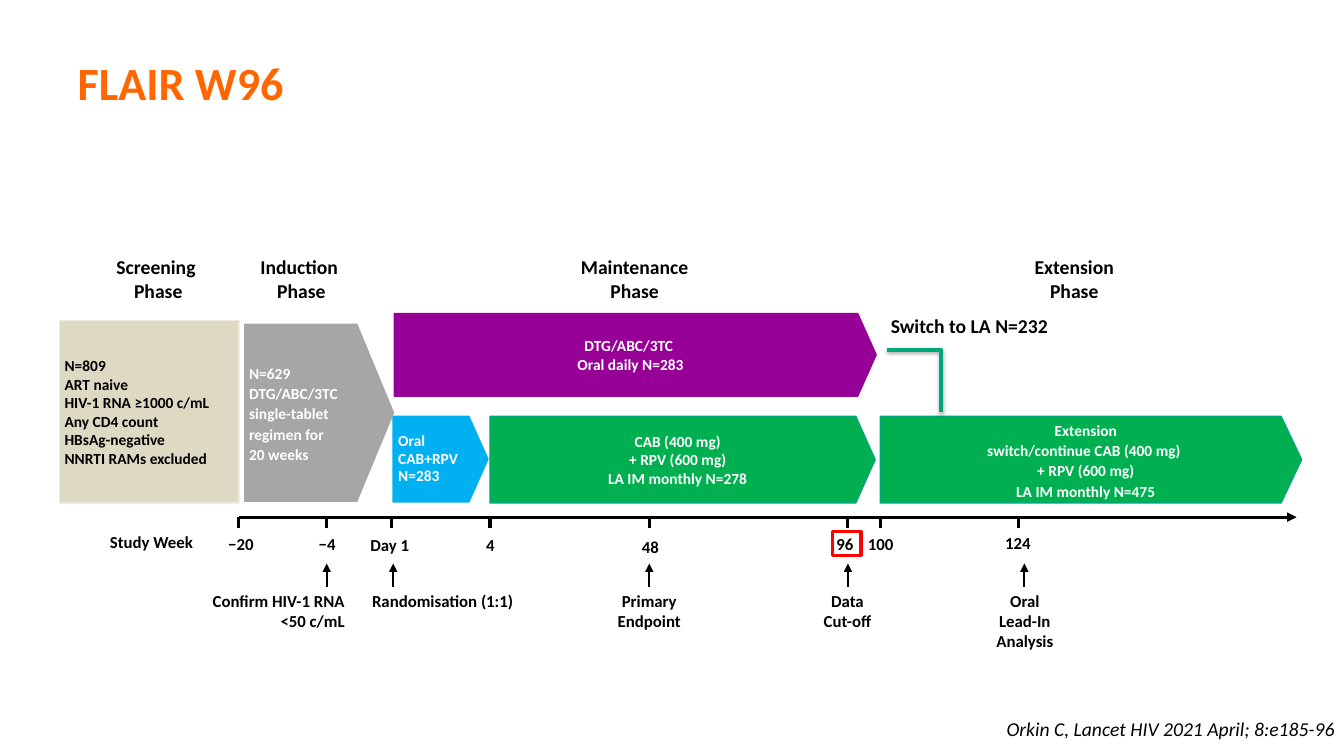
import pptx
import pptx.util
import pptx.dml.color
import pptx.enum.shapes
import pptx.enum.text
from lxml import etree
from pptx.oxml.ns import qn

Inches = pptx.util.Inches
Pt = pptx.util.Pt
RGB = pptx.dml.color.RGBColor
Kind = pptx.enum.shapes.MSO_SHAPE
Align = pptx.enum.text.PP_ALIGN
Anchor = pptx.enum.text.MSO_ANCHOR

ORANGE = RGB(0xFF, 0x66, 0x00)
BLACK = RGB(0, 0, 0)
WHITE = RGB(0xFF, 0xFF, 0xFF)
GREEN = RGB(0x00, 0xB0, 0x50)
TEAL = RGB(0x00, 0xA7, 0x79)
PURPLE = RGB(0x97, 0x00, 0x96)
GREY = RGB(0xA6, 0xA6, 0xA6)
BLUE = RGB(0x00, 0xB0, 0xF0)
SAND = RGB(0xDD, 0xD9, 0xC3)
CREAM = RGB(0xEE, 0xEC, 0xE1)
RED = RGB(0xFF, 0, 0)


class Board:
    font = "Calibri"

    def __init__(self, slide):
        self.slide = slide
        self.shapes = slide.shapes

    def style(self, frame, text, size, color=BLACK, align=Align.CENTER,
              inset=(0, 0, 0, 0), space=None, bold=True, italic=None):
        frame.text = text
        (frame.margin_left, frame.margin_top,
         frame.margin_right, frame.margin_bottom) = map(Inches, inset)
        for para in frame.paragraphs:
            para.alignment = align
            para.line_spacing = space
            for run in para.runs:
                font = run.font
                font.name, font.size = self.font, Pt(size)
                font.bold, font.italic = bold, italic
                font.color.rgb = color

    def title(self, text, left, top, width, height):
        box = self.shapes.title
        box.left, box.top = Inches(left), Inches(top)
        box.width, box.height = Inches(width), Inches(height)
        box.text_frame.vertical_anchor = Anchor.MIDDLE
        self.style(box.text_frame, text, 33, ORANGE, Align.LEFT,
                   (0.1, 0.05, 0.1, 0.05))

    def label(self, text, left, top, width, height, size=12, **look):
        box = self.shapes.add_textbox(
            Inches(left), Inches(top), Inches(width), Inches(height))
        box.text_frame.word_wrap = False
        self.style(box.text_frame, text, size, **look)

    def block(self, kind, left, top, width, height, fill=None, line=None,
              weight=1, point=None, text=None, **look):
        shape = self.shapes.add_shape(
            kind, Inches(left), Inches(top), Inches(width), Inches(height))
        shape.shadow.inherit = False
        if point is not None:
            shape.adjustments[0] = point
        if fill is None:
            shape.fill.background()
        else:
            shape.fill.solid()
            shape.fill.fore_color.rgb = fill
        if line is None:
            shape.line.fill.background()
        else:
            shape.line.color.rgb = line
            shape.line.width = Pt(weight)
        if text:
            shape.text_frame.word_wrap = True
            shape.text_frame.vertical_anchor = Anchor.MIDDLE
            self.style(shape.text_frame, text, 11, **look)

    def line(self, x1, y1, x2, y2, weight, arrow=False):
        line = self.shapes.add_connector(
            pptx.enum.shapes.MSO_CONNECTOR.STRAIGHT,
            Inches(x1), Inches(y1), Inches(x2), Inches(y2))
        line.line.color.rgb = BLACK
        line.line.width = Pt(weight)
        props = line._element.spPr
        if arrow:
            etree.SubElement(props.find(qn("a:ln")), qn("a:tailEnd"),
                             type="triangle")
        etree.SubElement(props, qn("a:effectLst"))

    def elbow(self, points, color, weight):
        start, *rest = [(Inches(x), Inches(y)) for x, y in points]
        pen = self.shapes.build_freeform(*start)
        pen.add_line_segments(rest, close=False)
        shape = pen.convert_to_shape()
        shape.fill.background()
        shape.line.color.rgb = color
        shape.line.width = Pt(weight)
        # Soft shadow below the line
        shape.shadow.inherit = False
        glow = etree.SubElement(
            shape._element.spPr.find(qn("a:effectLst")), qn("a:outerShdw"),
            blurRad=str(Pt(3.1)), dist=str(Pt(1.8)), dir="5400000",
            rotWithShape="0")
        tone = etree.SubElement(glow, qn("a:srgbClr"), val="000000")
        etree.SubElement(tone, qn("a:alpha"), val="35000")


def main():
    deck = pptx.Presentation()
    deck.slide_width, deck.slide_height = Inches(13.33), Inches(7.5)
    board = Board(deck.slides.add_slide(deck.slide_layouts[5]))
    board.title("FLAIR W96", 0.67, 0, 9.26, 1.63)

    # Phase headings
    for text, left, width in (
            ("Screening \nPhase", 0.88, 1.38),
            ("Induction \nPhase", 2.29, 1.4),
            ("Maintenance\vPhase", 5.76, 1.07),
            ("Extension\vPhase", 10.26, 0.79)):
        board.label(text, left, 2.53, width, 0.47, 14)

    # Study arms
    pad = (0.05, 0.05, 0.05, 0.05)
    side = (0.1, 0.05, 0.1, 0.05)
    board.block(
        Kind.RECTANGLE, 0.59, 3.18, 1.78, 1.81, SAND, CREAM,
        text="N=809\nART naive\nHIV-1 RNA ≥1000 c/mL\vAny CD4 count\n"
             "HBsAg-negative\nNNRTI RAMs excluded",
        align=Align.LEFT, inset=(0.05, 0.05, 0, 0.05))
    arms = (
        (2.42, 3.21, 1.49, 1.77, GREY, None, 0.246,
         "N=629\nDTG/ABC/3TC\nsingle-tablet regimen for \v20 weeks",
         Align.LEFT, pad, 1.1),
        (3.91, 3.11, 4.78, 0.82, PURPLE, PURPLE, 0.223,
         "DTG/ABC/3TC \nOral daily N=283", Align.CENTER, side, None),
        (3.9, 4.13, 0.94, 0.85, BLUE, BLUE, 0.223,
         "Oral\vCAB+RPV\vN=283", Align.LEFT, pad, 0.95),
        (4.86, 4.13, 3.82, 0.86, GREEN, TEAL, 0.223,
         "CAB (400 mg)\n+ RPV (600 mg)\vLA IM monthly N=278",
         Align.CENTER, (0, 0.05, 0, 0.05), None),
        (8.73, 4.13, 4.18, 0.86, GREEN, TEAL, 0.237,
         "Extension\vswitch/continue CAB (400 mg) \v+ RPV (600 mg)\v"
         "LA IM monthly N=475", Align.CENTER, side, 1.1))
    for (left, top, width, height, fill, line, point,
         text, align, inset, space) in arms:
        board.block(Kind.PENTAGON, left, top, width, height, fill, line,
                    point=point, text=text, color=WHITE, align=align,
                    inset=inset, space=space)

    # Switch to long-acting therapy
    board.label("Switch to LA N=232", 8.83, 3.11, 1.57, 0.24, 14)
    board.elbow([(8.8, 3.47), (9.33, 3.47), (9.33, 4.09)], TEAL, 3)

    # Time axis with ticks
    axis = 5.13
    board.line(2.37, axis, 12.86, axis, 2.25, arrow=True)
    for x in (2.37, 3.24, 3.88, 4.86, 6.44, 8.41, 8.73, 10.1):
        board.line(x, axis, x, axis + 0.11, 2.25)

    # Study weeks
    board.label("Study Week", 1.09, 5.28, 0.83, 0.2, align=Align.LEFT)
    for text, left, top, width in (
            ("−20", 2.26, 5.3, 0.26), ("−4", 3.16, 5.3, 0.17),
            ("Day 1", 3.67, 5.31, 0.39), ("4", 4.63, 5.31, 0.47),
            ("48", 6.22, 5.32, 0.46), ("96 ", 8.17, 5.3, 0.46),
            ("100", 8.46, 5.3, 0.55), ("124", 9.84, 5.29, 0.51)):
        board.label(text, left, top, width, 0.2)
    board.block(Kind.RECTANGLE, 8.26, 5.27, 0.28, 0.24, line=RED, weight=2.25)

    # Milestones with arrows
    for x, text, left, width, height, align in (
            (3.24, "Confirm HIV-1 RNA\v<50 c/mL", 2.09, 1.33, 0.4,
             Align.RIGHT),
            (3.9, "Randomisation (1:1) ", 3.68, 1.46, 0.2, Align.CENTER),
            (6.44, "Primary\vEndpoint", 6.12, 0.64, 0.4, Align.CENTER),
            (8.41, "Data\vCut-off", 8.16, 0.49, 0.4, Align.CENTER),
            (10.16, "Oral\vLead-In\vAnalysis", 9.88, 0.57, 0.61,
             Align.CENTER)):
        board.line(x, 5.82, x, 5.59, 1.5, arrow=True)
        board.label(text, left, 5.86, width, height, align=align)

    # Citation
    board.label("Orkin C, Lancet HIV 2021 April; 8:e185-96",
                9.85, 7.06, 3.49, 0.34, 14, align=Align.RIGHT, inset=side,
                bold=False, italic=True)
    deck.save("out.pptx")


if __name__ == "__main__":
    main()
